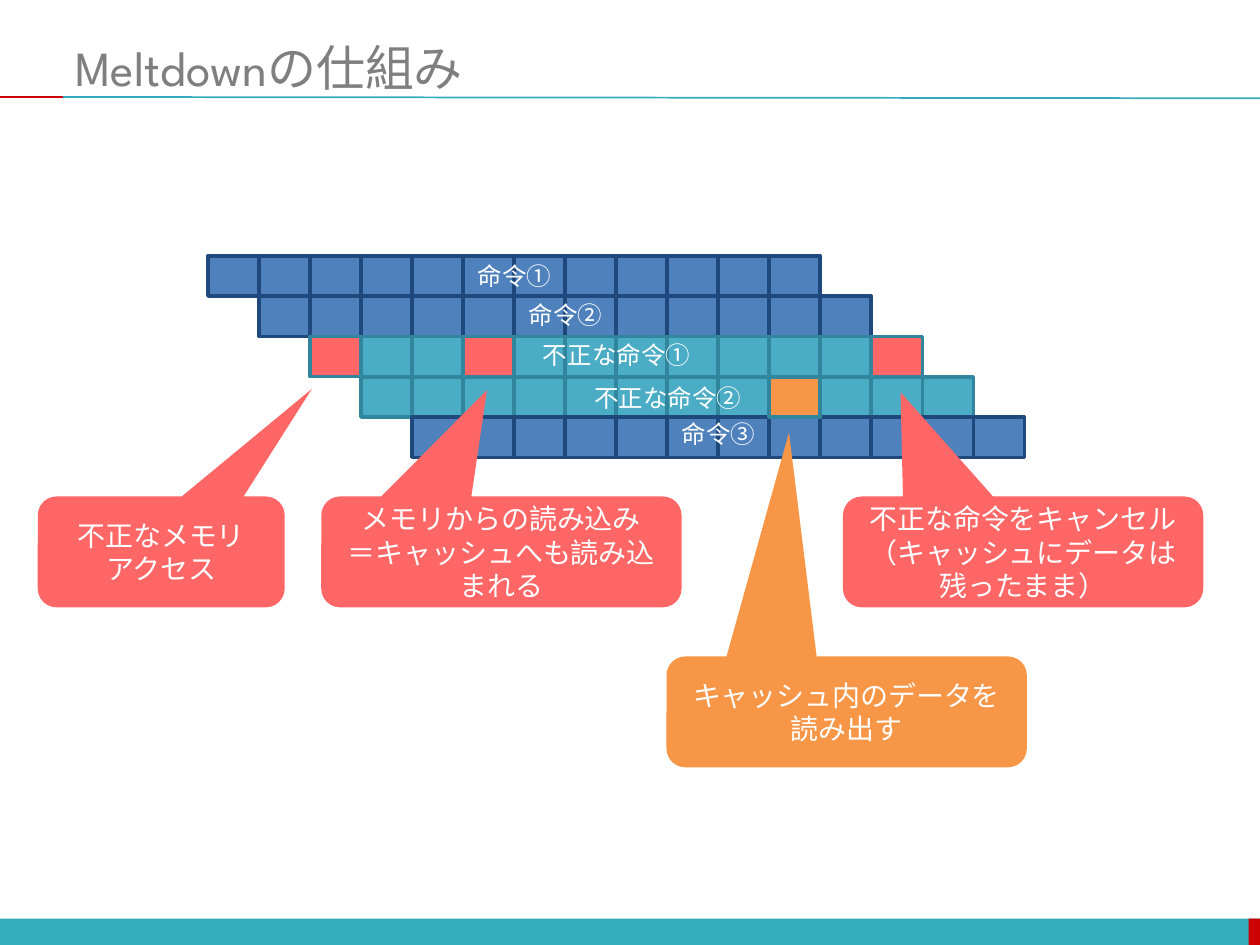
import pptx
import pptx.util
import pptx.dml.color
import pptx.enum.shapes
import pptx.enum.text

FONT = "League Spartan"
TEAL, RED, CORAL, AMBER, WHITE = "33ACBD", "CC0000", "FF6666", "F79646", "FFFFFF"
BLUE = ("4F81BD", "1F497D")   # cell fill, border
CYAN = ("4BACC6", "31859C")

# Pipeline: label, label top, colours, {stage: highlight}
ROWS = [
    ("命令①", 2.02, BLUE, {}),
    ("命令②", 2.33, BLUE, {}),
    ("不正な命令①", 2.65, CYAN, {0: CORAL, 3: CORAL, 11: CORAL}),
    ("不正な命令②", 2.99, CYAN, {8: AMBER}),
    ("命令③", 3.28, BLUE, {}),
]
# Callouts: lines, left, top, width, pointer x and y, fill
NOTES = [
    (["不正なメモリ", "アクセス"], 0.3, 3.94, 1.96, 0.61, -1.47, CORAL),
    (["メモリからの読み込み", "＝キャッシュへも読み込まれる"],
     2.55, 3.94, 2.86, -0.04, -1.46, CORAL),
    (["不正な命令をキャンセル", "（キャッシュにデータは残ったまま）"],
     6.69, 3.94, 2.86, -0.34, -1.44, CORAL),
    (["キャッシュ内のデータを読み出す"], 5.29, 5.21, 2.86, -0.16, -2.52, AMBER),
]
# Footer bars: left, width, colour
BARS = [(0, 10, TEAL), (9.91, 0.1, RED)]
# Title rules: start x, end x, end y, colour
RULES = [(0.5, 10, 0.78, TEAL), (0, 0.5, 0.77, RED)]

STAGES = 12
LEFT, TOP, STEP, HIGH = 1.65, 2.03, 0.405, 0.32

KIND = pptx.enum.shapes.MSO_SHAPE
ALIGN = pptx.enum.text.PP_ALIGN
MID = pptx.enum.text.MSO_ANCHOR.MIDDLE

deck = pptx.Presentation()
deck.slide_width = pptx.util.Inches(10)
deck.slide_height = pptx.util.Inches(7.5)
slide = deck.slides.add_slide(deck.slide_layouts[6])
shapes = slide.shapes


def inch(*nums):
    return [pptx.util.Inches(n) for n in nums]


def color(code):
    return pptx.dml.color.RGBColor.from_string(code)


def block(kind, box, fill, edge=None):
    shape = shapes.add_shape(kind, *inch(*box))
    shape.shadow.inherit = False
    shape.fill.solid()
    shape.fill.fore_color.rgb = color(fill)
    if edge:
        shape.line.color.rgb = color(edge)
        shape.line.width = pptx.util.Pt(2)
    else:
        shape.line.fill.background()
    return shape


def write(shape, lines, size, tint=WHITE, align=ALIGN.CENTER, anchor=MID):
    frame = shape.text_frame
    frame.word_wrap = True
    frame.vertical_anchor = anchor
    for i, line in enumerate(lines):
        para = frame.add_paragraph() if i else frame.paragraphs[0]
        para.text = line
        para.alignment = align
        para.font.size = pptx.util.Pt(size)
        para.font.name = FONT
        para.font.color.rgb = color(tint)


def cell(row, stage, fill, edge):
    box = (LEFT + (row + stage) * STEP, TOP + row * HIGH, STEP, HIGH)
    block(KIND.RECTANGLE, box, fill, edge)


# Footer and title
for left, width, tint in BARS:
    block(KIND.RECTANGLE, (left, 7.29, width, 0.22), tint)
for start, end, low, tint in RULES:
    rule = shapes.add_connector(pptx.enum.shapes.MSO_CONNECTOR.STRAIGHT,
                                *inch(start, 0.77, end, low))
    rule.line.color.rgb = color(tint)
    rule.line.width = pptx.util.Pt(1)
    rule._element.spPr.append(pptx.oxml.xmlchemy.OxmlElement("a:effectLst"))
title = shapes.add_textbox(*inch(0.5, 0.3, 9.5, 0.46))
write(title, ["Meltdownの仕組み"], 28, "7F7F7F", ALIGN.LEFT)

# Plain cells, each row one stage later
for row, (_, _, (fill, edge), marks) in enumerate(ROWS):
    for stage in range(STAGES):
        if stage not in marks:
            cell(row, stage, fill, edge)

# Row labels
for row, (label, top, _, _) in enumerate(ROWS):
    box = shapes.add_textbox(*inch(LEFT + 1.72 + row * STEP, top, 1.43, 0.34))
    write(box, [label], 14, anchor=pptx.enum.text.MSO_ANCHOR.TOP)

# Callouts
for lines, left, top, width, tipx, tipy, fill in NOTES:
    note = block(KIND.ROUNDED_RECTANGULAR_CALLOUT, (left, top, width, 0.88), fill)
    note.adjustments[0] = tipx
    note.adjustments[1] = tipy
    note.adjustments[2] = 0.17
    write(note, lines, 16)

# Highlighted cells on top
for row, (_, _, (_, edge), marks) in enumerate(ROWS):
    for stage, fill in marks.items():
        cell(row, stage, fill, edge)

deck.save("out.pptx")
